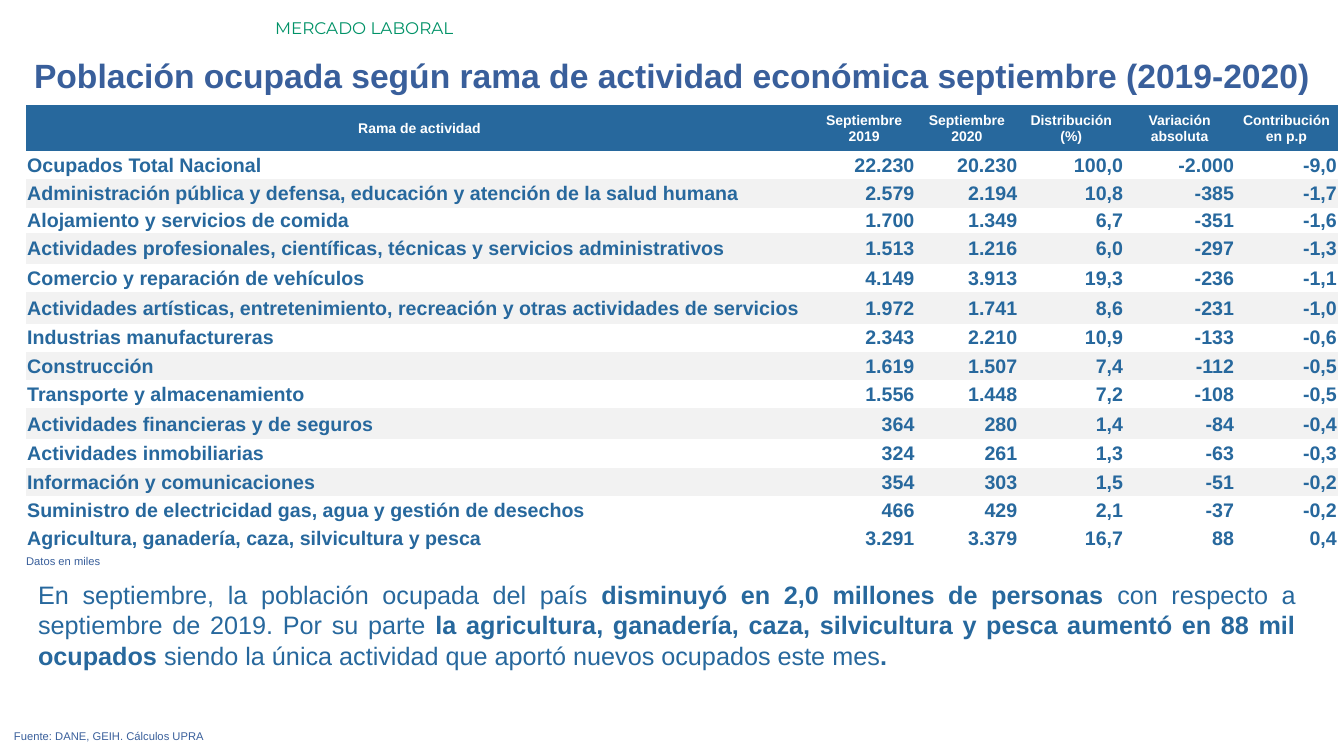
from pptx import Presentation
from pptx.dml.color import RGBColor
from pptx.enum.text import MSO_ANCHOR, MSO_AUTO_SIZE, PP_ALIGN
from pptx.util import Inches, Pt

LEFT, CENTER, RIGHT, JUST = PP_ALIGN.LEFT, PP_ALIGN.CENTER, PP_ALIGN.RIGHT, PP_ALIGN.JUSTIFY
MIDDLE = MSO_ANCHOR.MIDDLE
GROW = MSO_AUTO_SIZE.SHAPE_TO_FIT_TEXT
NO_STYLE = "{2D5ABB26-0587-4C30-8999-92F81FD0307C}"

THEME = {
    "blue": RGBColor.from_string("27689D"),
    "slate": RGBColor.from_string("395F9B"),
    "green": RGBColor.from_string("009267"),
    "white": RGBColor.from_string("FFFFFF"),
    "gray": RGBColor.from_string("F2F2F2"),
    "tag": Pt(12), "title": Pt(24), "body": Pt(18),
    "note": Pt(8), "head": Pt(10), "cell": Pt(14),
}


def style(font, size, color, bold=False, name="Arial"):
    for key, value in {"name": name, "size": THEME[size], "bold": bold}.items():
        setattr(font, key, value)
    font.color.rgb = THEME[color]


def add_text(box, runs, size, color, align, name="Arial"):
    """Add a growing text box; runs holds pairs of text and bold."""
    shape = slide.shapes.add_textbox(*[Inches(n) for n in box])
    frame = shape.text_frame
    frame.word_wrap = True
    frame.auto_size = GROW
    para = frame.paragraphs[0]
    para.alignment = align
    for text, bold in runs:
        run = para.add_run()
        run.text = text
        style(run.font, size, color, bold, name)


prs = Presentation()
prs.slide_width, prs.slide_height = Inches(13.33), Inches(7.5)
slide = prs.slides.add_slide(prs.slide_layouts[6])

# Heading
add_text((2.63, 0.13, 10.7, 0.3), [("MERCADO LABORAL", False)],
         "tag", "green", LEFT, "Montserrat")
title = "Población ocupada según rama de actividad económica septiembre (2019-2020)"
add_text((0, 0.5, 13.33, 0.5), [(title, True)], "title", "slate", CENTER)

# Summary and source
summary = [
    ("En septiembre, la población ocupada del país ", False),
    ("disminuyó en 2,0 millones de personas ", True),
    ("con respecto a septiembre de 2019. Por su parte ", False),
    ("la agricultura, ganadería, caza, silvicultura y pesca aumentó en 88 mil ocupados ", True),
    ("siendo la única actividad que aportó nuevos ocupados este mes", False),
    (".", True),
]
add_text((0.28, 5.7, 12.67, 1.01), summary, "body", "blue", JUST)
add_text((0.04, 7.19, 12.91, 0.24), [("Fuente: DANE, GEIH. Cálculos UPRA", False)],
         "note", "slate", JUST)

# Table of jobs by branch
rows = [
    ("Rama de actividad", "Septiembre\v2019", "Septiembre\v2020",
     "Distribución\n(%)", "Variación\nabsoluta", "Contribución\nen p.p"),
    ("Ocupados Total Nacional", "22.230", "20.230", "100,0", "-2.000", "-9,0"),
    ("Administración pública y defensa, educación y atención de la salud humana",
     "2.579", "2.194", "10,8", "-385", "-1,7"),
    ("Alojamiento y servicios de comida", "1.700", "1.349", "6,7", "-351", "-1,6"),
    ("Actividades profesionales, científicas, técnicas y servicios administrativos",
     "1.513", "1.216", "6,0", "-297", "-1,3"),
    ("Comercio y reparación de vehículos", "4.149", "3.913", "19,3", "-236", "-1,1"),
    ("Actividades artísticas, entretenimiento, recreación y otras actividades de servicios",
     "1.972", "1.741", "8,6", "-231", "-1,0"),
    ("Industrias manufactureras", "2.343", "2.210", "10,9", "-133", "-0,6"),
    ("Construcción", "1.619", "1.507", "7,4", "-112", "-0,5"),
    ("Transporte y almacenamiento", "1.556", "1.448", "7,2", "-108", "-0,5"),
    ("Actividades financieras y de seguros", "364", "280", "1,4", "-84", "-0,4"),
    ("Actividades inmobiliarias", "324", "261", "1,3", "-63", "-0,3"),
    ("Información y comunicaciones", "354", "303", "1,5", "-51", "-0,2"),
    ("Suministro de electricidad gas, agua y gestión de desechos",
     "466", "429", "2,1", "-37", "-0,2"),
    ("Agricultura, ganadería, caza, silvicultura y pesca",
     "3.291", "3.379", "16,7", "88", "0,4"),
]
widths = [7.8, 1.02, 1.02, 1.05, 1.1, 1.02]
heights = {0: 0.46, 3: 0.25, 4: 0.31, 6: 0.31, 10: 0.31}
last = len(rows) - 1

frame = slide.shapes.add_table(len(rows), len(widths), Inches(0.26), Inches(1.04),
                               Inches(13.02), Inches(4.41))
table = frame.table
table.horz_banding = False
table._tbl.tblPr[0].text = NO_STYLE
for col, width in zip(table.columns, widths):
    col.width = Inches(width)

pads = {"margin_left": Inches(0.01), "margin_right": Inches(0.01),
        "margin_top": Inches(0.01), "margin_bottom": 0, "vertical_anchor": MIDDLE}
for r, row in enumerate(rows):
    table.rows[r].height = Inches(heights.get(r, 0.28))
    head = r == 0
    band = r % 2 == 0 and r < last
    for c, text in enumerate(row):
        cell = table.cell(r, c)
        for key, value in pads.items():
            setattr(cell, key, value)
        if head or band:
            cell.fill.solid()
            cell.fill.fore_color.rgb = THEME["blue" if head else "gray"]
        else:
            cell.fill.background()
        cell.text_frame.text = text
        for para in cell.text_frame.paragraphs:
            para.alignment = CENTER if head else RIGHT if c else LEFT
            for run in para.runs:
                style(run.font, "head" if head else "cell",
                      "white" if head else "blue", True)

add_text((0.16, 5.45, 12.91, 0.24), [("Datos en miles", False)], "note", "slate", JUST)

prs.save("out.pptx")
